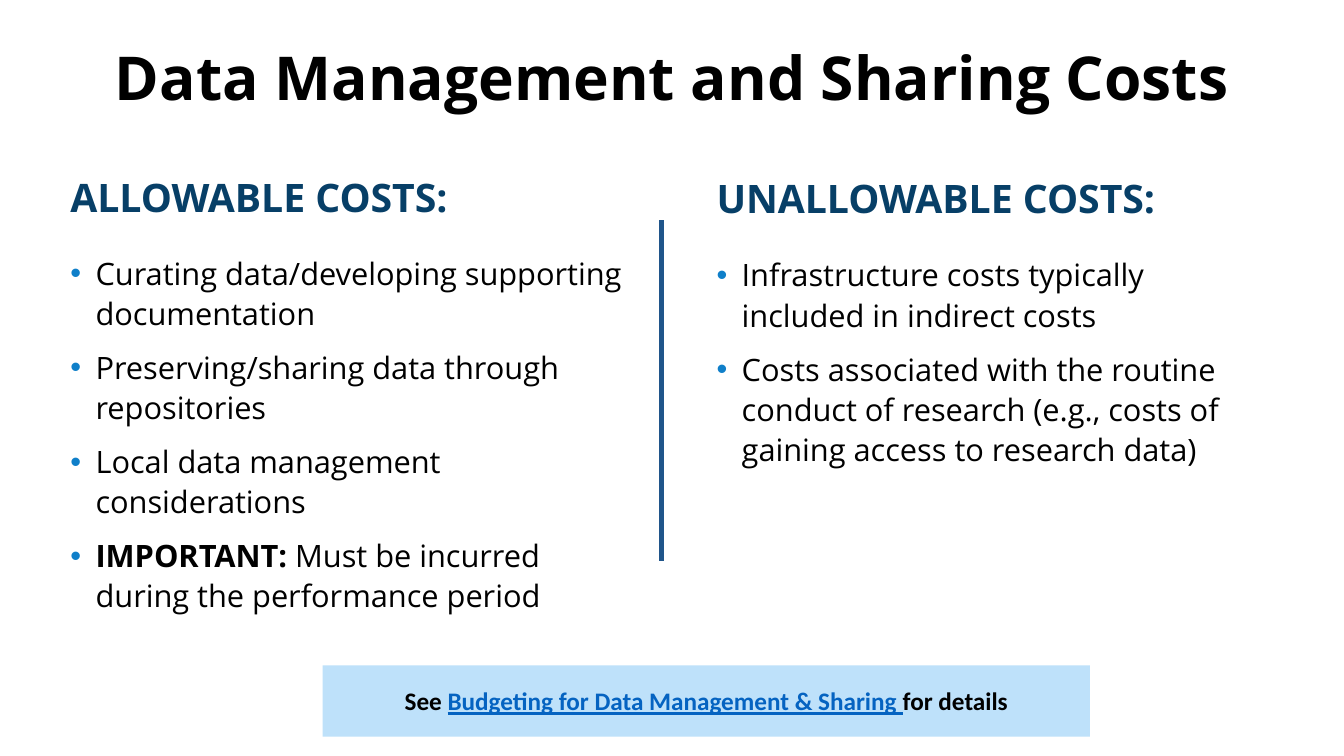
from dataclasses import dataclass

from lxml.etree import SubElement
from pptx import Presentation
from pptx.dml.color import RGBColor as Color
from pptx.enum.shapes import MSO_CONNECTOR as Connector, MSO_SHAPE as Shape
from pptx.enum.text import MSO_ANCHOR as Anchor, PP_ALIGN as Align
from pptx.oxml.ns import qn
from pptx.util import Pt


@dataclass(frozen=True)
class Theme:
    text_font: str = "Open Sans"
    note_font: str = "Calibri"
    title_size: float = 43.2
    heading_size: float = 28
    body_size: float = 22
    note_size: float = 18
    body_pitch: float = 28.6
    black: str = "000000"
    heading: str = "073F67"
    bullet: str = "0F7FC9"
    divider: str = "20558A"
    note_fill: str = "93CEF7"
    link: str = "0563C1"


THEME = Theme()

ALLOWABLE = [
    [("Curating data/developing supporting documentation", False)],
    [("Preserving/sharing data through repositories", False)],
    [("Local data management considerations", False)],
    [("IMPORTANT: ", True), ("Must be incurred during the performance period", False)],
]
UNALLOWABLE = [
    [("Infrastructure costs typically included in indirect costs", False)],
    [("Costs associated with the routine conduct of research "
      "(e.g., costs of gaining access to research data)", False)],
]


def add_run(para, text, size, color=THEME.black, bold=False, font=THEME.text_font):
    span = para.add_run()
    span.text = text
    span.font.name = font
    span.font.size = Pt(size)
    span.font.bold = bold
    span.font.color.rgb = Color.from_string(color)
    return span


def add_text_box(page, left, top, width, height):
    box = page.shapes.add_textbox(Pt(left), Pt(top), Pt(width), Pt(height))
    box.text_frame.word_wrap = True
    return box.text_frame


def set_bullet(para, indent=18):
    properties = para._p.get_or_add_pPr()
    properties.set("marL", str(Pt(indent)))
    properties.set("indent", str(-Pt(indent)))
    color = SubElement(properties, qn("a:buClr"))
    SubElement(color, qn("a:srgbClr"), val=THEME.bullet)
    SubElement(properties, qn("a:buFont"), typeface="Arial")
    SubElement(properties, qn("a:buChar"), char="•")


def add_title(page, left, top, width, height, text):
    frame = add_text_box(page, left, top, width, height)
    frame.vertical_anchor = Anchor.MIDDLE
    para = frame.paragraphs[0]
    para.alignment = Align.CENTER
    para.line_spacing = 0.9
    add_run(para, text, THEME.title_size, bold=True)


def add_cost_column(page, left, top, width, height, heading, items):
    frame = add_text_box(page, left, top, width, height)
    para = frame.paragraphs[0]
    para.line_spacing = 0.9
    para.space_after = Pt(12)
    add_run(para, heading, THEME.heading_size, THEME.heading, bold=True)
    for item in items:
        para = frame.add_paragraph()
        set_bullet(para)
        para.line_spacing = Pt(THEME.body_pitch)
        para.space_before = Pt(10)
        for text, bold in item:
            add_run(para, text, THEME.body_size, bold=bold)


def add_divider(page, left, top, height):
    line = page.shapes.add_connector(
        Connector.STRAIGHT, Pt(left), Pt(top), Pt(left), Pt(top + height))
    line.line.color.rgb = Color.from_string(THEME.divider)
    line.line.width = Pt(3)
    SubElement(line._element.spPr, qn("a:effectLst"))


def add_details_note(page, left, top, width, height):
    note = page.shapes.add_shape(Shape.RECTANGLE, Pt(left), Pt(top), Pt(width), Pt(height))
    note.shadow.inherit = False
    note.line.fill.background()
    note.fill.solid()
    note.fill.fore_color.rgb = Color.from_string(THEME.note_fill)
    tint = note._element.spPr.find(qn("a:solidFill")).find(qn("a:srgbClr"))
    SubElement(tint, qn("a:alpha"), val="60000")

    frame = note.text_frame
    frame.word_wrap = True
    frame.vertical_anchor = Anchor.TOP
    frame.margin_left = frame.margin_right = Pt(7.2)
    frame.margin_top = frame.margin_bottom = Pt(14.4)
    para = frame.paragraphs[0]
    para.alignment = Align.CENTER
    for text, color, underlined in (
        ("See ", THEME.black, False),
        ("Budgeting for Data Management & Sharing ", THEME.link, True),
        ("for details", THEME.black, False),
    ):
        span = add_run(para, text, THEME.note_size, color, True, THEME.note_font)
        span.font.underline = underlined


def add_costs_slide(deck):
    page = deck.slides.add_slide(deck.slide_layouts[6])
    add_title(page, 66, 6, 828, 104, "Data Management and Sharing Costs")
    add_cost_column(page, 43.2, 124, 412.5, 385, "ALLOWABLE COSTS:", ALLOWABLE)
    add_divider(page, 472.5, 157.5, 243)
    add_cost_column(page, 504.7, 125, 400.5, 385, "UNALLOWABLE COSTS:", UNALLOWABLE)
    add_details_note(page, 230.5, 475.2, 548, 51)


def main():
    deck = Presentation()
    deck.slide_width, deck.slide_height = Pt(960), Pt(540)
    add_costs_slide(deck)
    deck.save("out.pptx")


if __name__ == "__main__":
    main()
